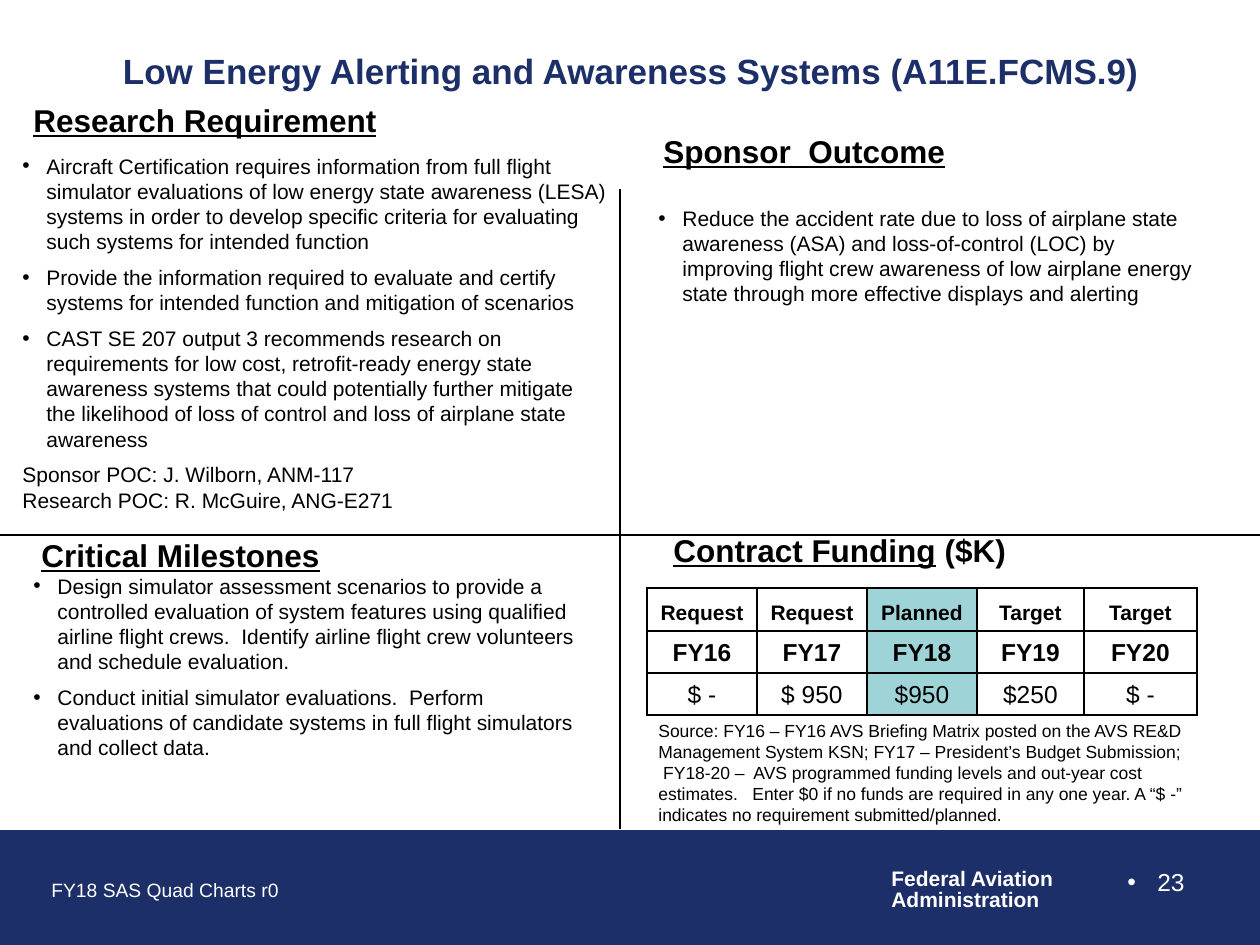
from lxml.etree import SubElement
from pptx import Presentation
from pptx.dml.color import RGBColor
from pptx.enum.shapes import MSO_CONNECTOR, MSO_SHAPE
from pptx.enum.text import MSO_ANCHOR, PP_ALIGN
from pptx.oxml.ns import qn
from pptx.util import Emu, Pt

NAVY = RGBColor(0x1D, 0x2F, 0x68)
TEAL = RGBColor(0x9E, 0xD3, 0xD7)
WHITE = RGBColor(0xFF, 0xFF, 0xFF)
BLACK = RGBColor(0, 0, 0)
FONT = "Arial"
WIDE, HIGH = 1260, 945
MID_X, MID_Y = 620, 535
BAND_Y = 831
HANG = 24

NEEDS = [
    "Aircraft Certification requires information from full flight simulator evaluations of low energy state awareness (LESA) systems in order to develop specific criteria for evaluating such systems for intended function",
    "Provide the information required to evaluate and certify systems for intended function and mitigation of scenarios",
    "CAST SE 207 output 3 recommends research on requirements for low cost, retrofit-ready energy state awareness systems that could potentially further mitigate the likelihood of loss of control and loss of airplane state awareness",
]
CONTACTS = ["Sponsor POC: J. Wilborn, ANM-117", "Research POC: R. McGuire, ANG-E271"]
OUTCOME = [
    "Reduce the accident rate due to loss of airplane state awareness (ASA) and loss-of-control (LOC) by improving flight crew awareness of low airplane energy state through more effective displays and alerting",
]
STEPS = [
    "Design simulator assessment scenarios to provide a controlled evaluation of system features using qualified airline flight crews.  Identify airline flight crew volunteers and schedule evaluation.",
    "Conduct initial simulator evaluations.  Perform evaluations of candidate systems in full flight simulators and collect data.",
]
FUNDS = [
    ["Request", "Request", "Planned", "Target", "Target"],
    ["FY16", "FY17", "FY18", "FY19", "FY20"],
    ["$ -", "$ 950", "$950", "$250", "$ -"],
]
SOURCE = "Source: FY16 – FY16 AVS Briefing Matrix posted on the AVS RE&D Management System KSN; FY17 – President’s Budget Submission;  FY18-20 –  AVS programmed funding levels and out-year cost estimates.   Enter $0 if no funds are required in any one year. A “$ -” indicates no requirement submitted/planned."


def px(n):
    return Emu(round(n * 914400 / 126))


def style(para, size, color=BLACK, bold=False):
    for run in para.runs:
        font = run.font
        font.name, font.size, font.bold = FONT, Pt(size), bold
        font.color.rgb = color


def bullet(para, hang=HANG):
    props = para._p.get_or_add_pPr()
    props.set("marL", str(px(hang)))
    props.set("indent", str(-px(hang)))
    SubElement(props, qn("a:buFont")).set("typeface", FONT)
    SubElement(props, qn("a:buChar")).set("char", "•")


def add_text(slide, box, text, size, color=BLACK, bold=False, wrap=True):
    frame = slide.shapes.add_textbox(*map(px, box)).text_frame
    frame.word_wrap = wrap
    frame.text = text
    for para in frame.paragraphs:
        style(para, size, color, bold)
    return frame


def add_line(slide, x1, y1, x2, y2):
    line = slide.shapes.add_connector(
        MSO_CONNECTOR.STRAIGHT, px(x1), px(y1), px(x2), px(y2))
    line.line.color.rgb = BLACK
    line.line.width = Pt(0.75)
    SubElement(line._element.spPr, qn("a:effectLst"))


def add_head(slide, box, text):
    frame = add_text(slide, box, text, 18, bold=True)
    frame.paragraphs[0].runs[0].font.underline = True
    return frame


def add_quad(slide, box, title, shift, drop, items, plain=()):
    """Heading at box plus shift; bullets drop below the top of the box."""
    x, y, w, h = box
    add_head(slide, (x + shift, y, w - shift, 48), title)
    frame = add_text(slide, (x, y + drop, w, h - drop),
                     "\n".join([*items, *plain]), 12)
    for i, para in enumerate(frame.paragraphs):
        if i < len(items):
            bullet(para)
        if 0 < i <= len(items):
            para.space_before = Pt(6)


def edge(cell):
    props = cell._tc.get_or_add_tcPr()
    for i, side in enumerate(("lnL", "lnR", "lnT", "lnB")):
        line = props.makeelement(qn(f"a:{side}"), {"w": str(Pt(1))})
        fill = SubElement(line, qn("a:solidFill"))
        SubElement(fill, qn("a:srgbClr")).set("val", str(BLACK))
        props.insert(i, line)


def add_funds(slide, box):
    x, y, w, h = box
    frame = add_head(slide, (x + 14, y, w, 48), "Contract Funding")
    tail = frame.paragraphs[0].add_run()
    tail.text = " ($K)"
    style(frame.paragraphs[0], 18, bold=True)

    wides, highs = (110, 110, 110, 107, 113), (43, 42, 42)
    table = slide.shapes.add_table(
        len(highs), len(wides), px(x), px(y + 63),
        px(sum(wides)), px(sum(highs))).table
    for col, wide in zip(table.columns, wides):
        col.width = px(wide)
    for r, (row, high) in enumerate(zip(FUNDS, highs)):
        table.rows[r].height = px(high)
        for c, text in enumerate(row):
            cell = table.cell(r, c)
            cell.text = text
            cell.vertical_anchor = MSO_ANCHOR.BOTTOM
            cell.fill.solid()
            cell.fill.fore_color.rgb = TEAL if c == 2 else WHITE
            edge(cell)
            para = cell.text_frame.paragraphs[0]
            para.alignment = PP_ALIGN.CENTER
            style(para, 14 if r else 12, bold=r < 2)
    add_text(slide, (x - 1, y + 189, w, h - 189), SOURCE, 10)


def add_foot(slide, box):
    x, y, w, h = box
    band = slide.shapes.add_shape(MSO_SHAPE.RECTANGLE, *map(px, box))
    band.shadow.inherit = False
    band.fill.solid()
    band.fill.fore_color.rgb = NAVY
    band.line.color.rgb = NAVY
    band.line.width = Pt(0.75)
    add_text(slide, (x + 39, y + 41, 255, 37), "FY18 SAS Quad Charts r0",
             11, WHITE, wrap=False)
    agency = add_text(slide, (x + 879, y + 32, 189, 55),
                      "Federal Aviation\nAdministration", 12, WHITE, True, False)
    for para in agency.paragraphs:
        para.line_spacing = 0.85
    page = add_text(slide, (x + 903, y + 30, 294, 66), "23", 14, WHITE)
    bullet(page.paragraphs[0], 30)
    page.paragraphs[0].alignment = PP_ALIGN.RIGHT


def add_title(slide, box):
    title = slide.shapes.title
    title.left, title.top, title.width, title.height = map(px, box)
    frame = title.text_frame
    frame.text = "Low Energy Alerting and Awareness Systems (A11E.FCMS.9)"
    frame.word_wrap = True
    frame.vertical_anchor = MSO_ANCHOR.MIDDLE
    frame.paragraphs[0].alignment = PP_ALIGN.CENTER
    style(frame.paragraphs[0], 20, NAVY, True)


def main():
    deck = Presentation()
    deck.slide_width, deck.slide_height = px(WIDE), px(HIGH)
    slide = deck.slides.add_slide(deck.slide_layouts[5])
    add_foot(slide, (0, BAND_Y, WIDE, 113))
    add_title(slide, (47, 18, 1168, 105))
    add_line(slide, MID_X, 189, MID_X, 829)
    add_line(slide, 0, MID_Y, WIDE, MID_Y)
    add_quad(slide, (10, 95, 610, 440), "Research Requirement", 11, 52,
             NEEDS, CONTACTS)
    add_quad(slide, (646, 126, 571, 188), "Sponsor  Outcome", 5, 73, OUTCOME)
    add_quad(slide, (21, 530, 573, 279), "Critical Milestones", 8, 37, STEPS)
    add_funds(slide, (647, 525, 551, 306))
    deck.save("out.pptx")


if __name__ == "__main__":
    main()
